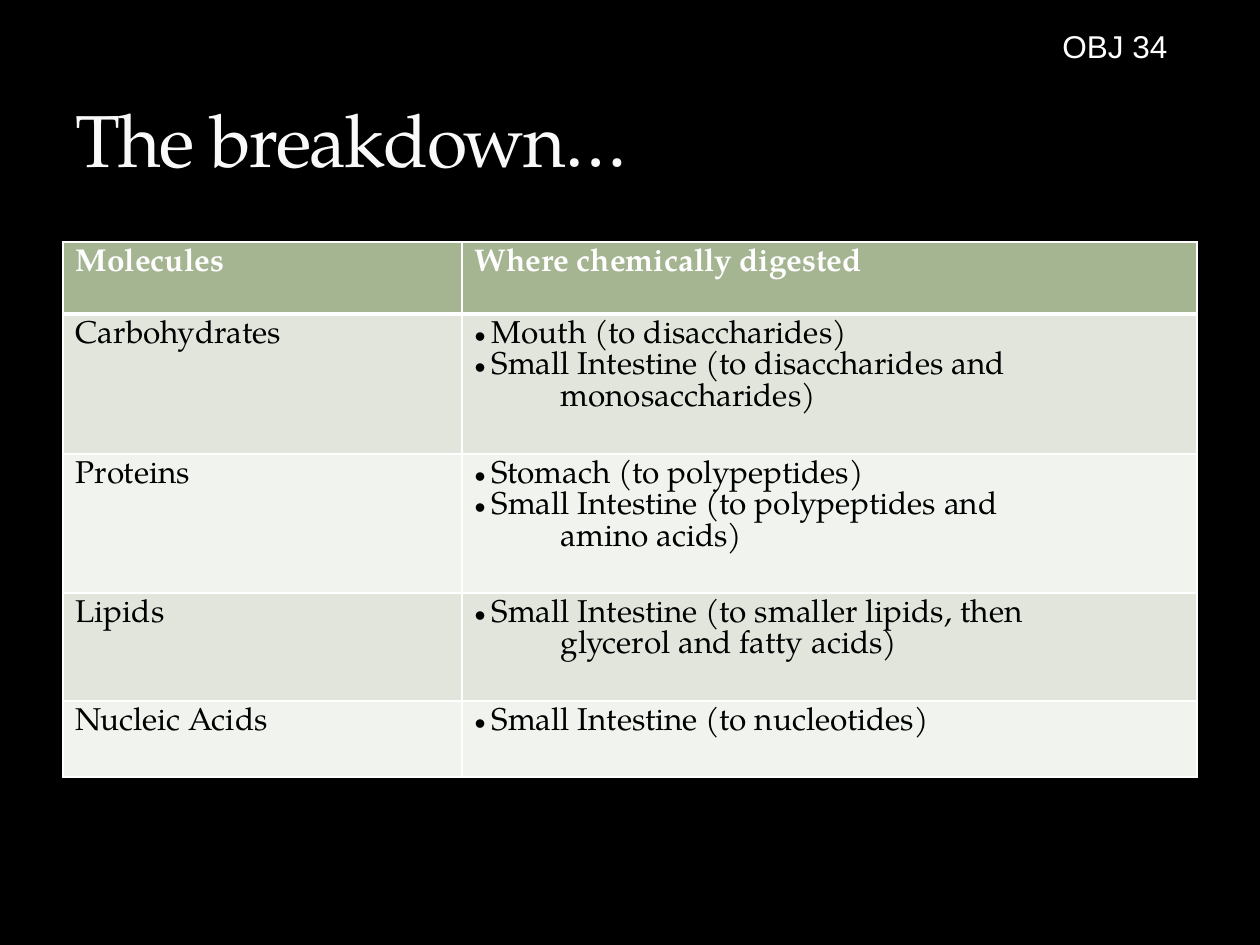
from dataclasses import dataclass

from lxml.etree import SubElement
from pptx import Presentation
from pptx.dml.color import RGBColor as RGB
from pptx.enum.text import MSO_ANCHOR as Anchor, PP_ALIGN as Align
from pptx.oxml.ns import qn
from pptx.util import Emu, Pt

EMU_PER_PX = 914400 // 126
TITLE_ONLY = 5
BULLET_INDENT = 17
CONTINUED_INDENT = 86


@dataclass(frozen=True)
class Theme:
    background: str = "000000"
    title: str = "F9F9F9"
    light: str = "FFFFFF"
    dark: str = "000000"
    header: str = "A5B592"
    bands: tuple = ("E1E5DC", "F0F3EE")
    serif: str = "TeX Gyre Pagella"
    sans: str = "Arial"
    title_size: int = 42
    body_size: int = 18
    line_spacing: float = 18.15
    thin: int = 1
    thick: int = 3


THEME = Theme()
COLUMN_WIDTHS = (399, 735)
ROW_HEIGHTS = (72, 140, 139, 108, 76)
HEADINGS = ("Molecules", "Where chemically digested")
# Each digestion site is a bulleted line, with an optional continuation line.
MOLECULES = (
    ("Carbohydrates", (
        ("Mouth (to disaccharides)",),
        ("Small Intestine (to disaccharides and", "monosaccharides)"))),
    ("Proteins", (
        ("Stomach (to polypeptides)",),
        ("Small Intestine (to polypeptides and", "amino acids)"))),
    ("Lipids", (
        ("Small Intestine (to smaller lipids, then", "glycerol and fatty acids)"),)),
    ("Nucleic Acids", (
        ("Small Intestine (to nucleotides)",),)),
)


def px(length):
    return Emu(length * EMU_PER_PX)


def place(shape, left, top, width, height):
    shape.left, shape.top = px(left), px(top)
    shape.width, shape.height = px(width), px(height)


def format_runs(paragraph, size, color, font_name, bold=False):
    for run in paragraph.runs:
        font = run.font
        font.size, font.name, font.bold = Pt(size), font_name, bold
        font.color.rgb = RGB.from_string(color)


def indent(paragraph, margin, bullet=False):
    properties = paragraph._p.get_or_add_pPr()
    properties.set("marL", str(px(margin)))
    properties.set("indent", str(-px(margin) if bullet else 0))
    if bullet:
        SubElement(properties, qn("a:buFont"), typeface=THEME.sans)
        SubElement(properties, qn("a:buChar"), char="•")


def set_borders(cell, top, bottom):
    properties = cell._tc.get_or_add_tcPr()
    widths = {"L": THEME.thin, "R": THEME.thin, "T": top, "B": bottom}
    for position, (side, width) in enumerate(widths.items()):
        line = properties.makeelement(qn(f"a:ln{side}"), {"w": str(Pt(width))})
        fill = SubElement(line, qn("a:solidFill"))
        SubElement(fill, qn("a:srgbClr"), val=THEME.light)
        properties.insert(position, line)


def style_cell(cell, fill, color, bold, top, bottom):
    cell.fill.solid()
    cell.fill.fore_color.rgb = RGB.from_string(fill)
    set_borders(cell, top, bottom)
    for paragraph in cell.text_frame.paragraphs:
        paragraph.line_spacing = Pt(THEME.line_spacing)
        format_runs(paragraph, THEME.body_size, color, THEME.serif, bold)


def write_sites(cell, sites):
    cell.text_frame.text = "\n".join(line for site in sites for line in site)
    paragraphs = iter(cell.text_frame.paragraphs)
    for site in sites:
        indent(next(paragraphs), BULLET_INDENT, bullet=True)
        for _ in site[1:]:
            indent(next(paragraphs), CONTINUED_INDENT)


def add_title(slide, text):
    title = slide.shapes.title
    place(title, 63, 21, 1134, 168)
    frame = title.text_frame
    frame.text = text
    frame.vertical_anchor = Anchor.BOTTOM
    paragraph = frame.paragraphs[0]
    paragraph.alignment = Align.LEFT
    format_runs(paragraph, THEME.title_size, THEME.title, THEME.serif)
    paragraph.runs[0]._r.get_or_add_rPr().set("spc", "-100")


def add_label(slide, text):
    label = slide.shapes.add_textbox(px(1050), px(21), px(131), px(50))
    frame = label.text_frame
    frame.text = text
    frame.word_wrap = False
    format_runs(frame.paragraphs[0], THEME.body_size, THEME.light, THEME.sans)


def add_digestion_table(slide):
    table = slide.shapes.add_table(
        len(ROW_HEIGHTS), len(COLUMN_WIDTHS), px(63), px(242),
        px(sum(COLUMN_WIDTHS)), px(sum(ROW_HEIGHTS))).table
    for column, width in zip(table.columns, COLUMN_WIDTHS):
        column.width = px(width)
    for row, height in zip(table.rows, ROW_HEIGHTS):
        row.height = px(height)

    for column, heading in enumerate(HEADINGS):
        cell = table.cell(0, column)
        cell.text_frame.text = heading
        style_cell(cell, THEME.header, THEME.light, True, THEME.thin, THEME.thick)

    for row, (molecule, sites) in enumerate(MOLECULES, start=1):
        name_cell, sites_cell = table.cell(row, 0), table.cell(row, 1)
        name_cell.text_frame.text = molecule
        write_sites(sites_cell, sites)
        band = THEME.bands[(row - 1) % len(THEME.bands)]
        top = THEME.thick if row == 1 else THEME.thin
        for cell in (name_cell, sites_cell):
            style_cell(cell, band, THEME.dark, False, top, THEME.thin)


def main():
    presentation = Presentation()
    presentation.slide_width, presentation.slide_height = px(1260), px(945)
    slide = presentation.slides.add_slide(presentation.slide_layouts[TITLE_ONLY])
    slide.background.fill.solid()
    slide.background.fill.fore_color.rgb = RGB.from_string(THEME.background)
    add_digestion_table(slide)
    add_title(slide, "The breakdown…")
    add_label(slide, "OBJ 34")
    presentation.save("out.pptx")


if __name__ == "__main__":
    main()
